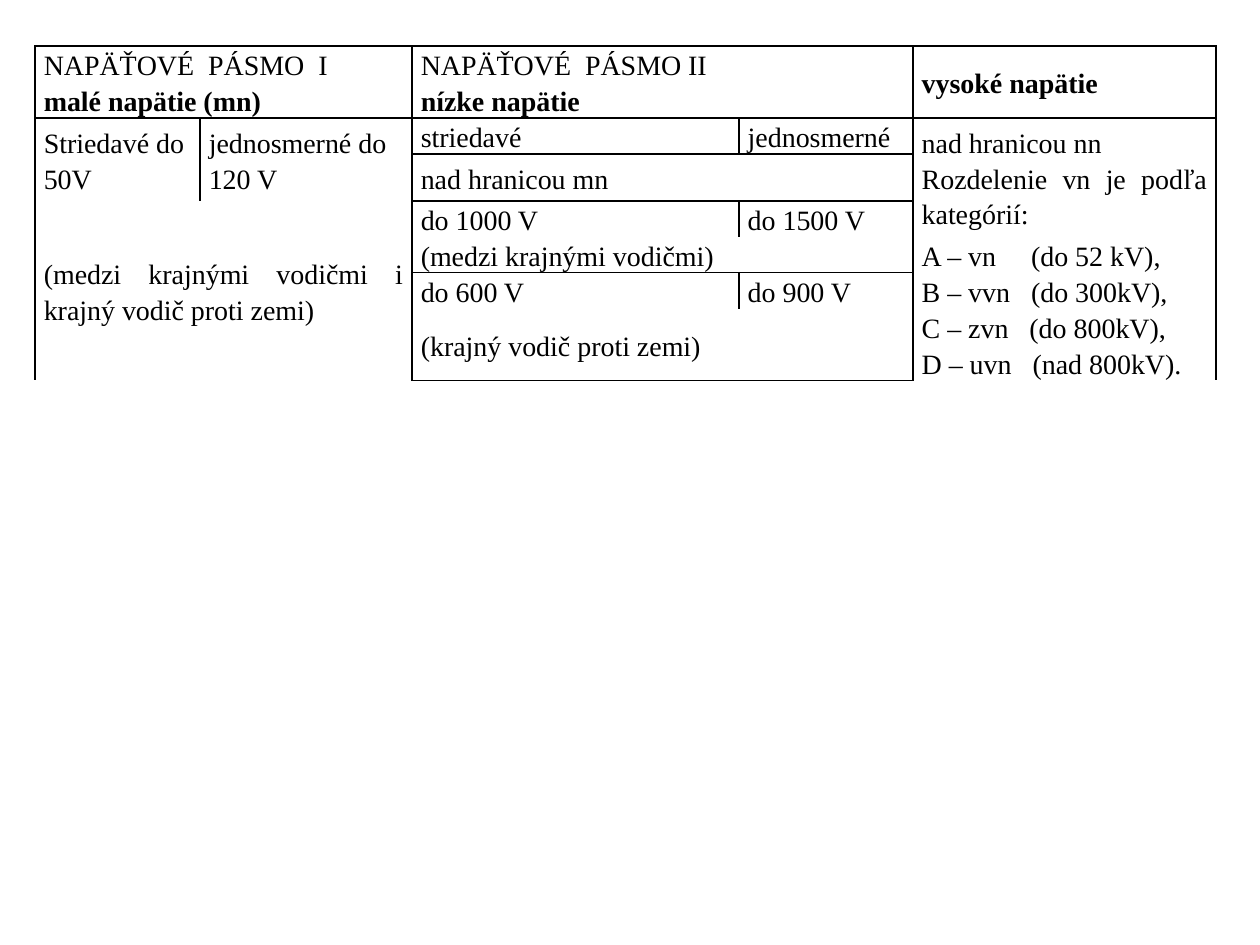
from lxml import etree
from pptx import Presentation, util as u
from pptx.dml.color import RGBColor
from pptx.enum import text
from pptx.oxml.ns import qn

PX = 914400 // 126
BLACK = RGBColor(0, 0, 0)
FONT = "Times New Roman"

LEFT, TOP = 35, 46
COLUMNS = [165, 212, 327, 174, 303]
ROWS = [72, 35, 47, 36, 35, 36, 72]

# row, column, row span, column span, bordered sides, lines as (wording, bold)
BLOCKS = [
    (0, 0, 1, 2, "LRTB", [("NAPÄŤOVÉ  PÁSMO  I", False), ("malé napätie (mn)", True)]),
    (0, 2, 1, 2, "LRTB", [("NAPÄŤOVÉ  PÁSMO II", False), ("nízke napätie", True)]),
    (0, 4, 1, 1, "LRTB", [("vysoké napätie", True)]),
    (1, 0, 2, 1, "LRT", [("Striedavé do ", False), ("50V", False)]),
    (1, 1, 2, 1, "LRT", [("jednosmerné do", False), ("120 V", False)]),
    (1, 2, 1, 1, "LRTB", [("striedavé", False)]),
    (1, 3, 1, 1, "LRTB", [("jednosmerné", False)]),
    (1, 4, 3, 1, "LRT", [("nad hranicou nn", False),
                         ("Rozdelenie vn je podľa kategórií:", False)]),
    (2, 2, 1, 2, "LRTB", [("nad hranicou mn", False)]),
    (3, 0, 4, 2, "LRB", [("(medzi krajnými vodičmi i krajný vodič proti zemi)", False)]),
    (3, 2, 1, 1, "LRT", [("do 1000 V", False)]),
    (3, 3, 1, 1, "LRT", [("do 1500 V", False)]),
    (4, 2, 1, 2, "LRB", [("(medzi krajnými vodičmi)", False)]),
    (4, 4, 3, 1, "LRB", [("A – vn     (do 52 kV),", False),
                         ("B – vvn   (do 300kV),", False),
                         ("C – zvn   (do 800kV),", False),
                         ("D – uvn   (nad 800kV).", False)]),
    (5, 2, 1, 1, "LRT", [("do 600 V", False)]),
    (5, 3, 1, 1, "LRT", [("do 900 V", False)]),
    (6, 2, 1, 2, "LRB", [("(krajný vodič proti zemi)", False)]),
]


def edges(row, column, height=1, width=1):
    return {
        "L": {("v", r, column) for r in range(row, row + height)},
        "R": {("v", r, column + width) for r in range(row, row + height)},
        "T": {("h", row, c) for c in range(column, column + width)},
        "B": {("h", row + height, c) for c in range(column, column + width)},
    }


def draw_borders(cell, own_edges, ruled):
    properties = cell._tc.get_or_add_tcPr()
    for side, edge in own_edges.items():
        line = etree.SubElement(properties, qn(f"a:ln{side}"), w=str(u.Pt(1)))
        if edge <= ruled:
            fill = etree.SubElement(line, qn("a:solidFill"))
            etree.SubElement(fill, qn("a:srgbClr"), val=str(BLACK))
        else:
            etree.SubElement(line, qn("a:noFill"))
    cell.fill.background()


def write_lines(cell, lines):
    cell.vertical_anchor = text.MSO_ANCHOR.MIDDLE
    cell.margin_left = cell.margin_right = u.Inches(0.07)
    cell.margin_top = cell.margin_bottom = 0
    for index, (wording, bold) in enumerate(lines):
        frame = cell.text_frame
        paragraph = frame.add_paragraph() if index else frame.paragraphs[0]
        paragraph.alignment = text.PP_ALIGN.JUSTIFY
        paragraph.line_spacing = 1.15
        run = paragraph.add_run()
        run.text = wording
        run.font.name = FONT
        run.font.size = u.Pt(16)
        run.font.bold = bold
        run.font.color.rgb = BLACK


def main():
    deck = Presentation()
    deck.slide_width, deck.slide_height = 1260 * PX, 945 * PX
    slide = deck.slides.add_slide(deck.slide_layouts[6])
    voltages = slide.shapes.add_table(
        len(ROWS), len(COLUMNS), LEFT * PX, TOP * PX,
        sum(COLUMNS) * PX, sum(ROWS) * PX).table
    voltages.first_row = voltages.horz_banding = False
    for column, width in zip(voltages.columns, COLUMNS):
        column.width = width * PX
    for row, height in zip(voltages.rows, ROWS):
        row.height = height * PX

    ruled = set()
    for row, column, height, width, sides, lines in BLOCKS:
        block_edges = edges(row, column, height, width)
        ruled.update(*(block_edges[side] for side in sides))
        cell = voltages.cell(row, column)
        if height * width > 1:
            cell.merge(voltages.cell(row + height - 1, column + width - 1))
        write_lines(cell, lines)

    for row in range(len(ROWS)):
        for column in range(len(COLUMNS)):
            draw_borders(voltages.cell(row, column), edges(row, column), ruled)
    deck.save("out.pptx")


if __name__ == "__main__":
    main()
